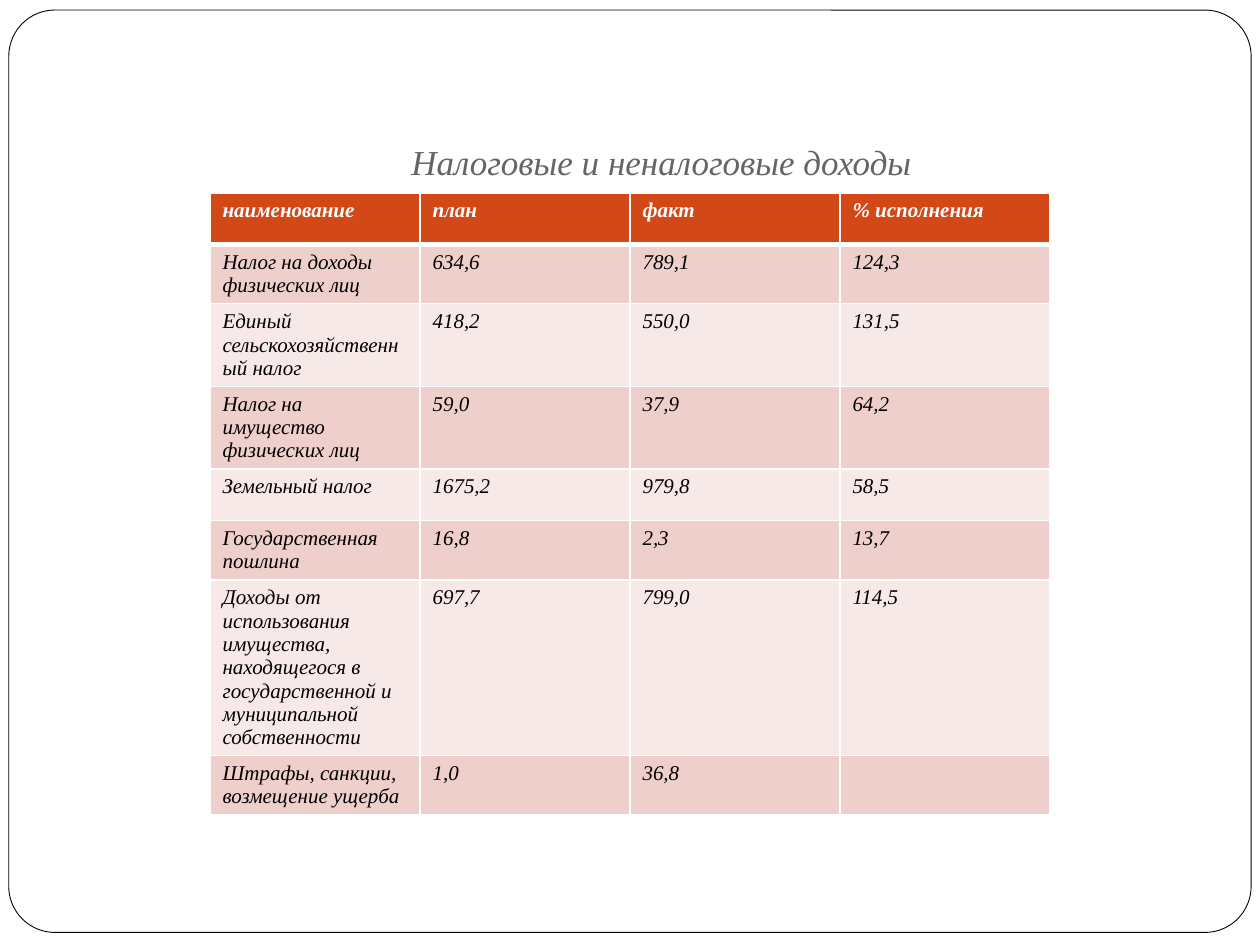
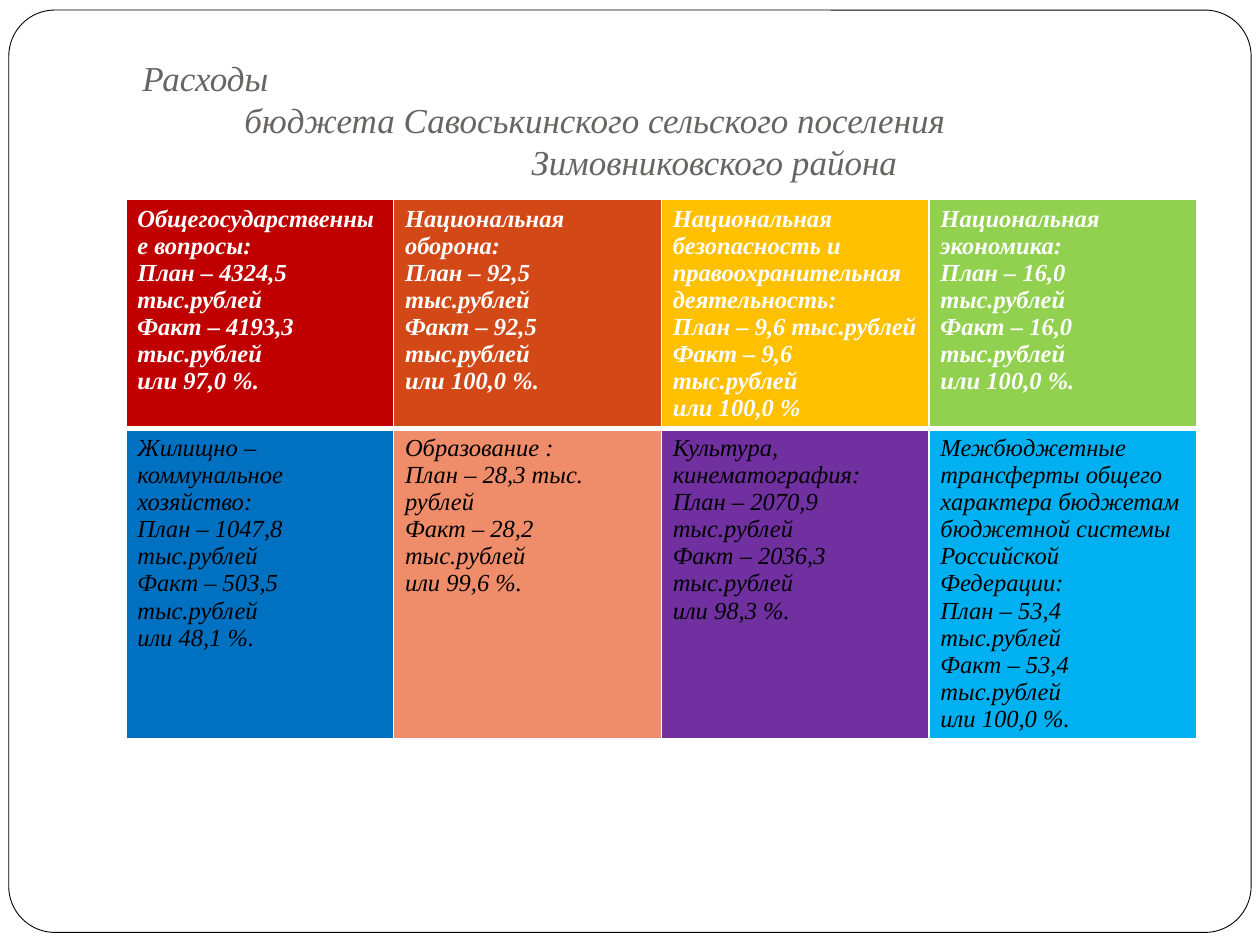
import pptx
import pptx.util
import pptx.dml.color
import pptx.enum.shapes
import pptx.enum.text
import pptx.oxml
import pptx.oxml.ns
import lxml.etree

COLORS = {
    "white": "FFFFFF", "black": "000000", "title": "696464",
    "accent": "D34817", "band_dark": "EFCFCC", "band_light": "F7E9E8",
    "red": "C00000", "amber": "FFC000", "green": "92D050", "blue": "0070C0",
    "salmon": "EF8C6A", "purple": "7030A0", "sky": "00B0F0",
}
FONT = "Times New Roman"
TITLE_SIZE = 20
WIDTH, HEIGHT = 10, 7.5
ROW_HEIGHT = 0.41
LEFT = pptx.enum.text.PP_ALIGN.LEFT
CENTER = pptx.enum.text.PP_ALIGN.CENTER

INCOME_TITLE = [("Налоговые и неналоговые доходы", CENTER, 0)]
INCOME = [
    ("наименование", "план", "факт", "% исполнения"),
    ("Налог на доходы физических лиц", "634,6", "789,1", "124,3"),
    ("Единый сельскохозяйственный налог", "418,2", "550,0", "131,5"),
    ("Налог на имущество физических лиц", "59,0", "37,9", "64,2"),
    ("Земельный налог", "1675,2", "979,8", "58,5"),
    ("Государственная пошлина", "16,8", "2,3", "13,7"),
    ("Доходы от использования имущества, находящегося в государственной "
     "и муниципальной собственности", "697,7", "799,0", "114,5"),
    ("Штрафы, санкции, возмещение ущерба", "1,0", "36,8", ""),
]

EXPENSE_TITLE = [
    ("Расходы", LEFT, 0.03),
    ("бюджета Савоськинского сельского поселения", LEFT, 0.84),
    ("Зимовниковского района", CENTER, 0),
]
EXPENSES = [
    [
        ("red", "Общегосударственные вопросы:", "4324,5 тыс.рублей",
         "4193,3 тыс.рублей", "97,0 %."),
        ("accent", "Национальная оборона:", "92,5 тыс.рублей",
         "92,5 тыс.рублей", "100,0 %."),
        ("amber", "Национальная безопасность и правоохранительная деятельность:",
         "9,6 тыс.рублей", "9,6 тыс.рублей", "100,0 %"),
        ("green", "Национальная экономика:", "16,0 тыс.рублей",
         "16,0 тыс.рублей", "100,0 %."),
    ],
    [
        ("blue", "Жилищно – коммунальное хозяйство:", "1047,8 тыс.рублей",
         "503,5 тыс.рублей", "48,1 %."),
        ("salmon", "Образование :", "28,3 тыс. рублей",
         "28,2 тыс.рублей", "99,6 %."),
        ("purple", "Культура, кинематография:", "2070,9 тыс.рублей",
         "2036,3 тыс.рублей", "98,3 %."),
        ("sky", "Межбюджетные трансферты общего характера бюджетам бюджетной "
         "системы Российской Федерации:", "53,4 тыс.рублей",
         "53,4 тыс.рублей", "100,0 %."),
    ],
]


def inches(*values):
    return [pptx.util.Inches(v) for v in values]


def rgb(name):
    return pptx.dml.color.RGBColor.from_string(COLORS[name])


def add_run(p, text, size, color, bold=False):
    r = p.add_run()
    r.text = text
    r.font.name = FONT
    r.font.size = pptx.util.Pt(size)
    r.font.italic = True
    r.font.bold = bold
    r.font.color.rgb = rgb(color)


def paragraphs(tf, count):
    return [tf.paragraphs[0]] + [tf.add_paragraph() for _ in range(count - 1)]


def set_up_layout(layout):
    title = layout.placeholders[0]
    title.left, title.top, title.width, title.height = inches(1, 0.3, 8.5, 1.25)
    tf = title.text_frame
    tf.auto_size = pptx.enum.text.MSO_AUTO_SIZE.NONE
    tf.vertical_anchor = pptx.enum.text.MSO_ANCHOR.BOTTOM
    tf.margin_left, tf.margin_top, tf.margin_right, tf.margin_bottom = inches(
        0.1, 0.05, 0.1, 0.1)


def add_master_frame(prs, slide):
    sp = slide.shapes.add_shape(
        pptx.enum.shapes.MSO_SHAPE.ROUNDED_RECTANGLE,
        *inches(0.07, 0.08, WIDTH - 0.14, 7.32))
    sp.adjustments[0] = 0.05
    sp.shadow.inherit = False
    sp.fill.solid()
    sp.fill.fore_color.rgb = rgb("white")
    sp.line.color.rgb = rgb("black")
    sp.line.width = pptx.util.Pt(0.5)
    prs.slide_master.shapes.element.insert(2, sp.element)


def add_title(slide, lines):
    tf = slide.shapes.title.text_frame
    for p, (text, align, indent) in zip(paragraphs(tf, len(lines)), lines):
        p.alignment = align
        if indent:
            p._p.get_or_add_pPr().set("marL", str(pptx.util.Inches(indent)))
        add_run(p, text, TITLE_SIZE, "title")


def set_borders(cell, row):
    tc_pr = cell._tc.get_or_add_tcPr()
    widths = {"lnL": 1, "lnR": 1, "lnT": 3 if row == 1 else 1,
              "lnB": 3 if row == 0 else 1}
    for tag, width in widths.items():
        ln = lxml.etree.SubElement(tc_pr, pptx.oxml.ns.qn("a:" + tag),
                                   w=str(pptx.util.Pt(width)))
        fill = lxml.etree.SubElement(ln, pptx.oxml.ns.qn("a:solidFill"))
        lxml.etree.SubElement(fill, pptx.oxml.ns.qn("a:srgbClr"),
                              val=COLORS["white"])


def add_table(slide, rows, box, size, margin):
    frame = slide.shapes.add_table(len(rows), len(rows[0]), *inches(*box))
    table = frame.table
    table.horz_banding = False
    for row in table.rows:
        row.height = pptx.util.Inches(ROW_HEIGHT)
    for i, row in enumerate(rows):
        for j, (fill, lines) in enumerate(row):
            cell = table.cell(i, j)
            cell.margin_left = cell.margin_right = pptx.util.Inches(margin)
            set_borders(cell, i)
            cell.fill.solid()
            cell.fill.fore_color.rgb = rgb(fill)
            color = "black" if i else "white"
            for p, line in zip(paragraphs(cell.text_frame, len(lines)), lines):
                add_run(p, line, size, color, bold=i == 0)


def income_cells():
    fills = ["accent"] + ["band_dark" if i % 2 else "band_light"
                          for i in range(1, len(INCOME))]
    return [[(fill, [text]) for text in row] for fill, row in zip(fills, INCOME)]


def expense_cells():
    return [[(fill, [name, f"План – {plan}", f"Факт – {fact}", f"или {share}"])
             for fill, name, plan, fact, share in row] for row in EXPENSES]


def main():
    prs = pptx.Presentation()
    prs.slide_width, prs.slide_height = inches(WIDTH, HEIGHT)
    layout = prs.slide_layouts[5]
    set_up_layout(layout)

    income = prs.slides.add_slide(layout)
    add_master_frame(prs, income)
    add_title(income, INCOME_TITLE)
    add_table(income, income_cells(), (WIDTH / 6, 1.53, WIDTH * 2 / 3, 5.21), 12, 0.1)

    expenses = prs.slides.add_slide(layout)
    add_title(expenses, EXPENSE_TITLE)
    add_table(expenses, expense_cells(), (1, 1.58, 8.5, 4.63), 14, 0.09)

    prs.save("out.pptx")


if __name__ == "__main__":
    main()
